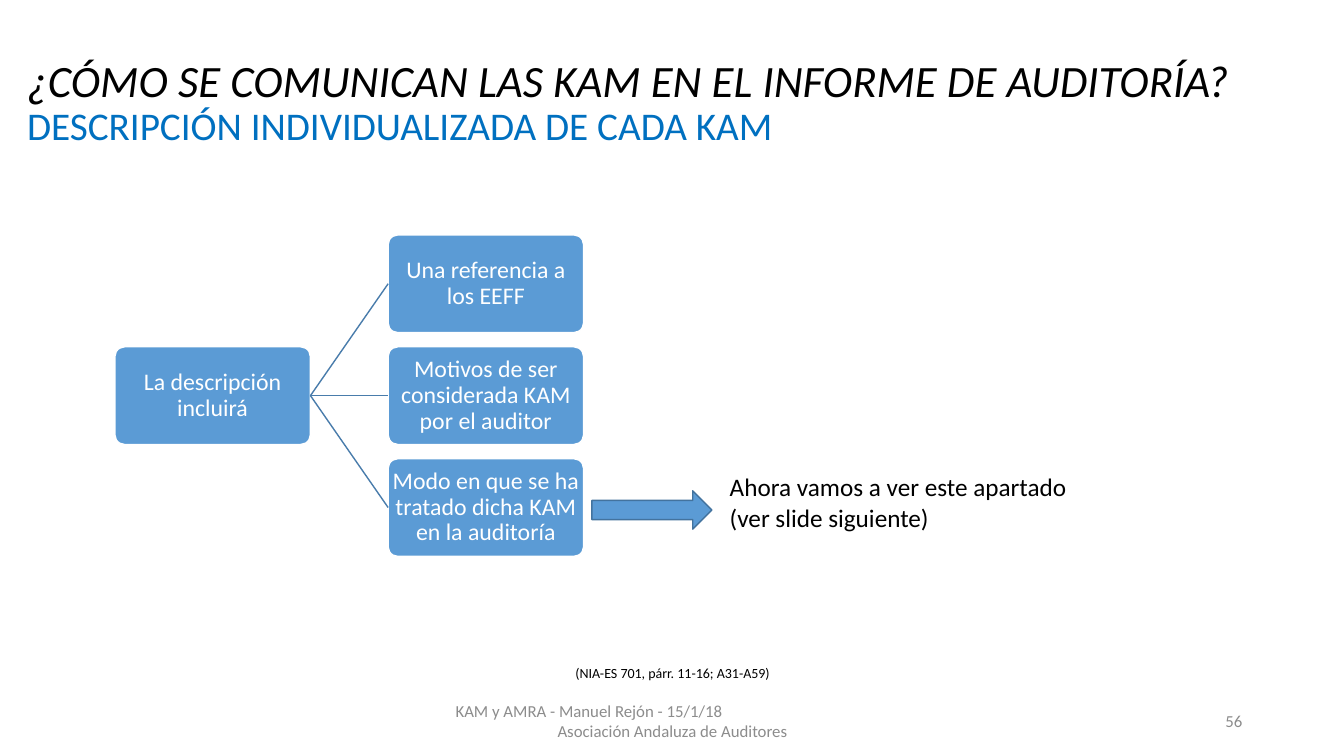
from lxml.etree import SubElement
from pptx import Presentation
from pptx.dml.color import RGBColor as Rgb
from pptx.enum.shapes import MSO_CONNECTOR as Connector, MSO_SHAPE as Shape
from pptx.enum.text import MSO_ANCHOR as Anchor, MSO_AUTO_SIZE as AutoSize, PP_ALIGN as Align
from pptx.oxml.ns import qn
from pptx.util import Inches, Pt

COLORS = {
    "black": "000000", "white": "FFFFFF", "heading": "0070C0", "footer": "8C8C8C",
    "node": "5B9BD5", "link": "497CAB", "arrow_edge": "43739E",
}
FONT = "Calibri"
SLIDE_SIZE = (13.33, 7.5)
# Areas and grid lengths are percentages of the slide's width and height.
GRID_ORIGIN = (8.55, 31.07)
GRID_STEP = (20.33, 14.8)
NODE_SIZE = (14.55, 12.93)
LEFT, RIGHT = 1, 3


class KamSlide:
    """Holds the style and the current slide."""

    def __init__(self, deck):
        deck.slide_width, deck.slide_height = map(Inches, SLIDE_SIZE)
        self.page = deck.slides.add_slide(deck.slide_layouts[6])

    def color(self, name):
        return Rgb.from_string(COLORS[name])

    def place(self, area):
        """Turn left, top, width and height in percent into lengths."""
        return [Inches(share * full / 100) for share, full in zip(area, SLIDE_SIZE * 2)]

    def add_lines(self, frame, lines, size, color, aligns=(Align.LEFT,), italic=False, spacing=1.0):
        """Fill a frame with one paragraph per line; the last alignment repeats."""
        frame.word_wrap = True
        for i, line in enumerate(lines):
            para = frame.paragraphs[0] if i == 0 else frame.add_paragraph()
            para.alignment = aligns[min(i, len(aligns) - 1)]
            para.line_spacing = spacing
            span = para.add_run()
            span.text = line
            font = span.font
            font.name, font.size, font.italic = FONT, Pt(size), italic
            font.color.rgb = self.color(color)

    def text(self, area, lines, size, color="black", anchor=Anchor.TOP, **style):
        box = self.page.shapes.add_textbox(*self.place(area))
        box.text_frame.auto_size = AutoSize.NONE
        box.text_frame.vertical_anchor = anchor
        self.add_lines(box.text_frame, lines, size, color, **style)
        return box

    def shape(self, kind, area, edge):
        box = self.page.shapes.add_shape(kind, *self.place(area))
        box.shadow.inherit = False
        box.fill.solid()
        box.fill.fore_color.rgb = self.color("node")
        box.line.color.rgb = self.color(edge)
        box.line.width = Pt(1)
        return box

    def node(self, column, row, label):
        """Place a rounded box on the diagram grid."""
        left, top = (start + step * n for start, step, n
                     in zip(GRID_ORIGIN, GRID_STEP, (column, row)))
        box = self.shape(Shape.ROUNDED_RECTANGLE, (left, top, *NODE_SIZE), "white")
        box.adjustments[0] = 0.1
        frame = box.text_frame
        frame.margin_left = frame.margin_right = Inches(0.01)
        frame.margin_top = frame.margin_bottom = Inches(0.01)
        frame.vertical_anchor = Anchor.MIDDLE
        self.add_lines(frame, [label], 17, "white", (Align.CENTER,), spacing=0.9)
        return box

    def link(self, parent, child):
        line = self.page.shapes.add_connector(Connector.STRAIGHT, 0, 0, 0, 0)
        line.begin_connect(parent, RIGHT)
        line.end_connect(child, LEFT)
        line.line.color.rgb = self.color("link")
        line.line.width = Pt(1)
        SubElement(line._element.spPr, qn("a:effectLst"))


def main():
    deck = Presentation()
    slide = KamSlide(deck)

    title = slide.text((1.28, 7.07, 91.82, 8.67),
                       ["¿CÓMO SE COMUNICAN LAS KAM EN EL INFORME DE AUDITORÍA?"],
                       32, italic=True, spacing=0.9)
    title.text_frame.paragraphs[0].space_before = Pt(10)
    slide.text((1.28, 12.8, 92.12, 7.6),
               ["DESCRIPCIÓN INDIVIDUALIZADA DE CADA KAM"], 28, "heading")

    root = slide.node(0, 1, "La descripción incluirá")
    contents = ["Una referencia a los EEFF",
                "Motivos de ser considerada KAM por el auditor",
                "Modo en que se ha tratado dicha KAM en la auditoría"]
    for row, label in enumerate(contents):
        slide.link(root, slide.node(1, row, label))

    slide.shape(Shape.RIGHT_ARROW, (44.04, 64.93, 8.93, 5.07), "arrow_edge")
    slide.text((53.56, 61.73, 31.88, 9.47),
               ["Ahora vamos a ver este apartado", "(ver slide siguiente)"], 18)

    slide.text((39.91, 87.2, 20.26, 3.6), ["(NIA-ES 701, párr. 11-16; A31-A59)"],
               10, aligns=(Align.CENTER,))
    slide.text((33.16, 92.67, 33.76, 5.33),
               ["KAM y AMRA - Manuel Rejón - 15/1/18", "Asociación Andaluza de Auditores"],
               12, "footer", Anchor.MIDDLE, aligns=(Align.LEFT, Align.CENTER))
    slide.text((70.67, 92.67, 22.51, 5.33), ["56"], 12, "footer", Anchor.MIDDLE,
               aligns=(Align.RIGHT,))

    deck.save("out.pptx")


if __name__ == "__main__":
    main()
